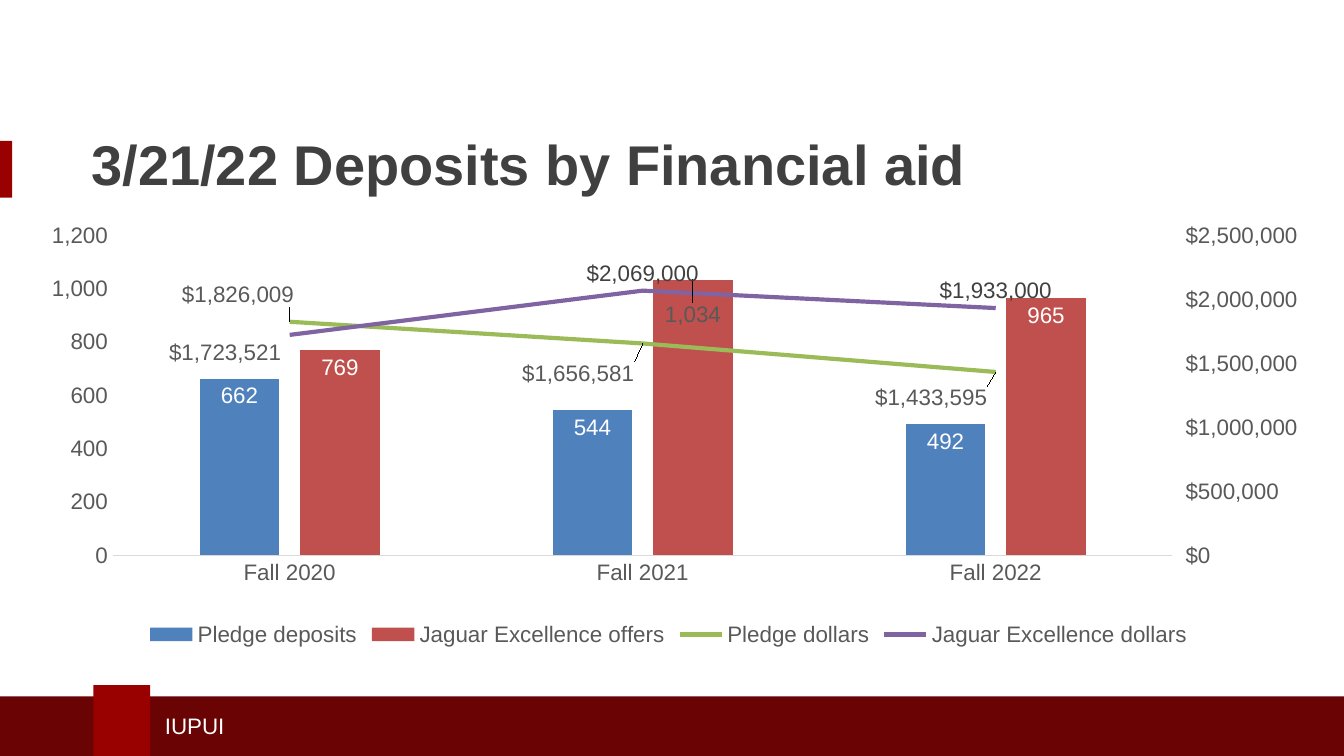
from copy import deepcopy
from dataclasses import dataclass

from lxml import etree
from pptx import Presentation
from pptx.chart.axis import ValueAxis
from pptx.chart.data import CategoryChartData
from pptx.dml.color import RGBColor
from pptx.enum.chart import (XL_CHART_TYPE, XL_LABEL_POSITION, XL_LEGEND_POSITION,
                             XL_MARKER_STYLE, XL_TICK_MARK)
from pptx.enum.shapes import MSO_SHAPE
from pptx.enum.text import MSO_ANCHOR, PP_ALIGN
from pptx.oxml import parse_xml
from pptx.oxml.ns import qn
from pptx.util import Pt

COLUMNS = XL_CHART_TYPE.COLUMN_CLUSTERED
INSIDE_END = XL_LABEL_POSITION.INSIDE_END
ABOVE, BELOW = XL_LABEL_POSITION.ABOVE, XL_LABEL_POSITION.BELOW
NO_TICK, TICK_OUT = XL_TICK_MARK.NONE, XL_TICK_MARK.OUTSIDE
LEGEND_BOTTOM = XL_LEGEND_POSITION.BOTTOM
NO_MARKER = XL_MARKER_STYLE.NONE
RECT = MSO_SHAPE.RECTANGLE
MIDDLE, LEFT = MSO_ANCHOR.MIDDLE, PP_ALIGN.LEFT

C_NS = "http://schemas.openxmlformats.org/drawingml/2006/chart"
COUNT, DOLLARS = "#,##0", '"$"#,##0'


@dataclass(frozen=True)
class Theme:
    font: str = "Arial"
    title_size: int = 30
    body_size: int = 12
    crimson: str = "990000"
    dark_crimson: str = "690304"
    title: str = "404041"
    label: str = "404040"
    axis_text: str = "595959"
    axis_line: str = "D9D9D9"
    white: str = "FFFFFF"
    blue: str = "4F81BD"
    red: str = "C0504D"
    green: str = "9BBB59"
    purple: str = "8064A2"


@dataclass
class Series:
    """One chart series; moved maps a point to its label shift in chart fractions."""
    name: str
    values: tuple
    color: str
    label_color: str
    label_position: object
    number_format: str
    moved: dict


def manual_layout(**parts):
    """Return a c:layout element holding the given manual layout values."""
    layout = etree.Element(qn("c:layout"), nsmap={"c": C_NS})
    manual = etree.SubElement(layout, qn("c:manualLayout"))
    for tag, value in parts.items():
        etree.SubElement(manual, qn(f"c:{tag}"), val=str(value))
    return layout


class SlideBuilder:
    def __init__(self, prs, theme):
        self.theme = theme
        self.s = prs.slides.add_slide(prs.slide_layouts[5])

    def style_font(self, font, size, color, bold=False):
        font.name, font.size, font.bold = self.theme.font, Pt(size), bold
        font.color.rgb = RGBColor.from_string(color)

    def fill_frame(self, tf, text, size, color, bold=False):
        tf.word_wrap = True
        tf.vertical_anchor = MIDDLE
        p = tf.paragraphs[0]
        p.text, p.alignment = text, LEFT
        self.style_font(p.font, size, color, bold)

    def title(self, text, x, y, w, h):
        sp = self.s.shapes.title
        sp.left, sp.top, sp.width, sp.height = Pt(x), Pt(y), Pt(w), Pt(h)
        self.fill_frame(sp.text_frame, text, self.theme.title_size, self.theme.title, True)

    def text(self, text, x, y, w, h, color):
        sp = self.s.shapes.add_textbox(Pt(x), Pt(y), Pt(w), Pt(h))
        self.fill_frame(sp.text_frame, text, self.theme.body_size, color)

    def rect(self, x, y, w, h, color):
        sp = self.s.shapes.add_shape(RECT, Pt(x), Pt(y), Pt(w), Pt(h))
        sp.shadow.inherit = False
        sp.fill.solid()
        sp.fill.fore_color.rgb = RGBColor.from_string(color)
        sp.line.fill.background()

    def combo_chart(self, categories, columns, lines, x, y, w, h, tops):
        """Add columns on the left axis and lines on the right; tops are the axis maxima."""
        data = CategoryChartData()
        data.categories = categories
        for item in columns + lines:
            data.add_series(item.name, item.values, item.number_format)
        chart = self.s.shapes.add_chart(COLUMNS, Pt(x), Pt(y), Pt(w), Pt(h), data).chart
        chart.has_title = False
        self.style_font(chart.font, self.theme.body_size, self.theme.axis_text)
        chart.has_legend = True
        chart.legend.position = LEGEND_BOTTOM
        chart.legend.include_in_layout = False
        self.style_font(chart.legend.font, self.theme.body_size, self.theme.axis_text)
        plot = chart.plots[0]
        plot.gap_width, plot.overlap, plot.vary_by_categories = 219, -27, False

        self.style_axes(chart, tops[0])
        self.add_line_plot(chart, len(columns), tops[1])
        for item, series in zip(columns, chart.plots[0].series):
            series.invert_if_negative = False
            series.format.fill.solid()
            series.format.fill.fore_color.rgb = RGBColor.from_string(item.color)
            self.label_series(series, item)
        for item, series in zip(lines, chart.plots[1].series):
            series.format.line.color.rgb = RGBColor.from_string(item.color)
            series.format.line.width = Pt(2.25)
            series.marker.style = NO_MARKER
            series.smooth = False
            self.label_series(series, item)

    def style_axes(self, chart, top):
        for axis in (chart.category_axis, chart.value_axis):
            axis.has_major_gridlines = False
            axis.major_tick_mark = axis.minor_tick_mark = NO_TICK
            self.style_font(axis.tick_labels.font, self.theme.body_size, self.theme.axis_text)
        line = chart.category_axis.format.line
        line.color.rgb = RGBColor.from_string(self.theme.axis_line)
        line.width = Pt(0.75)
        chart.value_axis.format.line.fill.background()
        self.scale_axis(chart.value_axis, top, 200, COUNT)

    def scale_axis(self, axis, top, step, number_format):
        axis.minimum_scale, axis.maximum_scale, axis.major_unit = 0, top, step
        axis.tick_labels.number_format = number_format
        axis.tick_labels.number_format_is_linked = False

    def add_line_plot(self, chart, first, top):
        """Move the series from index first on into a line plot with its own axes."""
        area = chart.plots[0]._element.getparent()
        bars = area.find(qn("c:barChart"))
        lines = parse_xml(
            f'<c:lineChart xmlns:c="{C_NS}"><c:grouping val="standard"/>'
            '<c:varyColors val="0"/><c:marker val="1"/>'
            '<c:axId val="5001"/><c:axId val="5002"/></c:lineChart>')
        for ser in bars.findall(qn("c:ser"))[first:]:
            for bar_only in ser.findall(qn("c:invertIfNegative")):
                ser.remove(bar_only)
            lines.find(qn("c:marker")).addprevious(ser)
        bars.addnext(lines)

        value_el = area.find(qn("c:valAx"))
        right_el, hidden_el = deepcopy(value_el), deepcopy(area.find(qn("c:catAx")))
        value_el.addnext(right_el)
        right_el.addnext(hidden_el)
        for el, own, other in ((hidden_el, "5001", "5002"), (right_el, "5002", "5001")):
            el.find(qn("c:axId")).set("val", own)
            el.find(qn("c:crossAx")).set("val", other)
        hidden_el.find(qn("c:delete")).set("val", "1")
        right_el.find(qn("c:axPos")).set("val", "r")
        right_el.find(qn("c:crosses")).set("val", "max")
        right = ValueAxis(right_el)
        right.major_tick_mark = TICK_OUT
        self.scale_axis(right, top, 500000, DOLLARS)

        for old in area.findall(qn("c:layout")):
            area.remove(old)
        area.insert(0, manual_layout(layoutTarget="inner", xMode="edge", yMode="edge",
                                     x=0.07, y=0.05, w=0.82, h=0.73))

    def label_series(self, series, item):
        labels = series.data_labels
        labels.show_value = True
        labels.position = item.label_position
        labels.number_format = item.number_format
        labels.number_format_is_linked = False
        self.style_font(labels.font, self.theme.body_size, item.label_color)
        root = labels._element
        shared = [root.find(qn("c:txPr")), root.find(qn("c:numFmt"))]
        for index, (dx, dy) in item.moved.items():
            series.points[index].data_label.position = item.label_position
            idx = next(el for el in root.iter(qn("c:idx")) if el.get("val") == str(index))
            for el in [deepcopy(part) for part in shared] + [manual_layout(x=dx, y=dy)]:
                idx.addnext(el)


def main():
    prs = Presentation()
    prs.slide_width, prs.slide_height = Pt(720), Pt(405)
    t = Theme()
    b = SlideBuilder(prs, t)
    b.rect(0, 75.5, 6.5, 30.5, t.crimson)
    b.rect(0, 373, 720, 32, t.dark_crimson)
    b.rect(50, 367, 30.5, 38, t.crimson)
    b.text("IUPUI", 81.2, 378, 284.5, 21.8, t.white)
    b.title("3/21/22 Deposits by Financial aid", 41.8, 60, 630, 54.7)

    columns = [
        Series("Pledge deposits", (662, 544, 492), t.blue, t.white, INSIDE_END, COUNT, {}),
        Series("Jaguar Excellence offers", (769, 1034, 965), t.red, t.white, INSIDE_END, COUNT,
               {1: (0, 0.04)}),
    ]
    lines = [
        Series("Pledge dollars", (1826009, 1656581, 1433595), t.green, t.label, BELOW, DOLLARS,
               {0: (-0.04, -0.1), 1: (-0.05, 0.03), 2: (-0.05, 0.02)}),
        Series("Jaguar Excellence dollars", (1723521, 2069000, 1933000), t.purple, t.label,
               ABOVE, DOLLARS, {0: (-0.05, 0.08)}),
    ]
    b.combo_chart(("Fall 2020", "Fall 2021", "Fall 2022"), columns, lines,
                  12.2, 114.5, 692, 234.7, tops=(1200, 2500000))
    prs.save("out.pptx")


if __name__ == "__main__":
    main()
